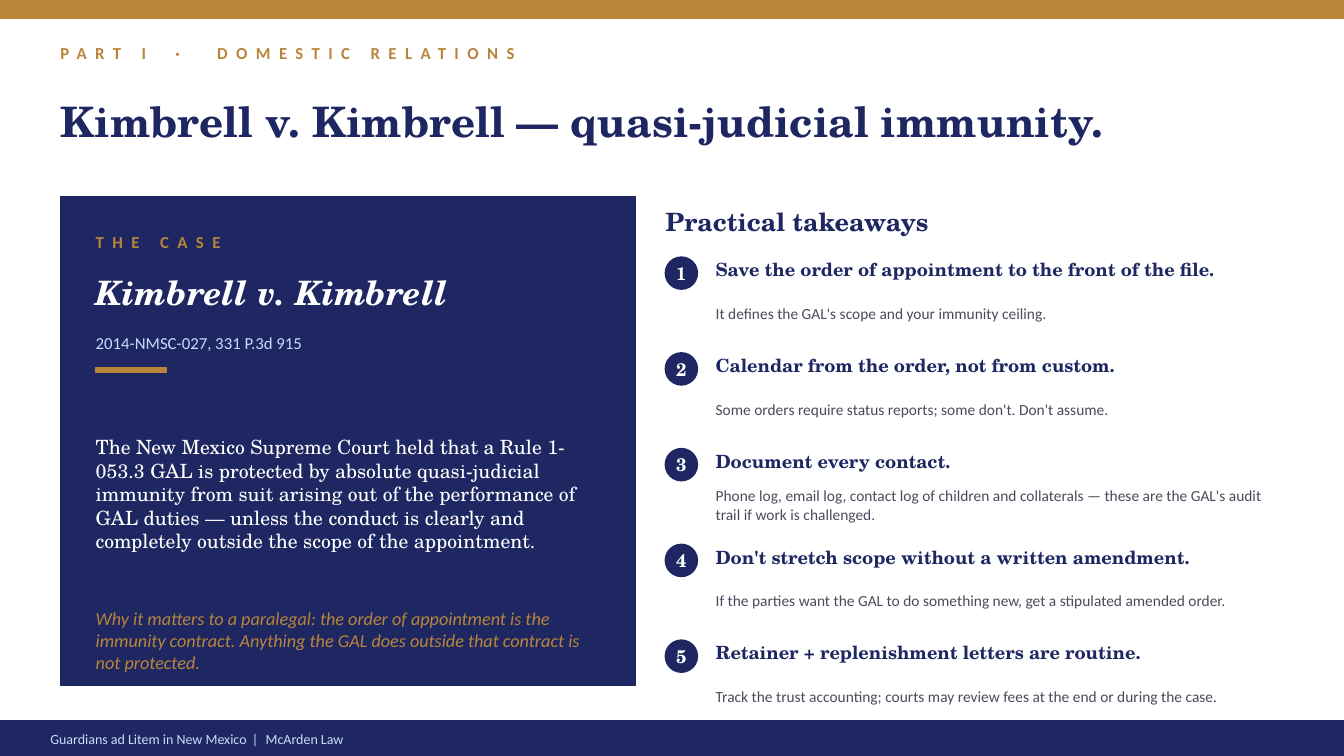
"""Build the slide on quasi-judicial immunity for guardians ad litem."""
from dataclasses import dataclass

from pptx import Presentation
from pptx.dml.color import RGBColor
from pptx.enum.shapes import MSO_SHAPE as Shape
from pptx.enum.text import MSO_ANCHOR as Anchor, MSO_AUTO_SIZE as AutoSize, PP_ALIGN as Align
from pptx.util import Pt


@dataclass(frozen=True)
class Theme:
    """Colours, fonts and type sizes."""
    navy: str = "1E2761"
    gold: str = "B8853B"
    ice: str = "CADCFC"
    white: str = "FFFFFF"
    slate: str = "4A4A5C"
    serif: str = "TeX Gyre Schola"
    sans: str = "Calibri"
    title: int = 30
    case: int = 24
    heading: int = 18
    holding: int = 14
    point: int = 13
    label: int = 12
    detail: int = 11
    footer: int = 10


@dataclass(frozen=True)
class Type:
    """One text style."""
    size: int
    color: str
    font: str
    bold: bool = False
    italic: bool = False
    tracking: float = 0


class Page:
    """A slide with its theme and a method for each kind of element."""

    def __init__(self, slide, theme):
        """Keep the slide and the theme."""
        self.slide = slide
        self.theme = theme

    def typeset(self, shape, runs, style, align=Align.LEFT):
        """Fill a shape with runs of (text, tracking) in one style."""
        frame = shape.text_frame
        frame.auto_size = AutoSize.NONE
        frame.word_wrap = True
        frame.vertical_anchor = Anchor.MIDDLE
        frame.margin_left = frame.margin_right = frame.margin_top = frame.margin_bottom = 0
        para = frame.paragraphs[0]
        para.alignment = align
        for text, tracking in runs:
            span = para.add_run()
            span.text = text
            font = span.font
            font.name, font.size = style.font, Pt(style.size)
            font.bold, font.italic = style.bold, style.italic
            font.color.rgb = RGBColor.from_string(style.color)
            if tracking:
                span._r.get_or_add_rPr().set("spc", str(int(tracking * 100)))

    def title(self, place, text, style):
        """Move and format the title placeholder."""
        box = self.slide.shapes.title
        box.left, box.top, box.width, box.height = map(Pt, place)
        self.typeset(box, [(text, 0)], style)

    def text(self, place, text, style):
        """Add a text box in one style."""
        self.spaced(place, [(text, style.tracking)], style)

    def spaced(self, place, runs, style):
        """Add a text box whose runs have their own tracking."""
        self.typeset(self.slide.shapes.add_textbox(*map(Pt, place)), runs, style)

    def block(self, place, color, kind=Shape.RECTANGLE):
        """Add a solid shape outlined in its own colour."""
        box = self.slide.shapes.add_shape(kind, *map(Pt, place))
        box.shadow.inherit = False
        box.fill.solid()
        box.fill.fore_color.rgb = box.line.color.rgb = RGBColor.from_string(color)
        box.line.width = Pt(1)
        return box

    def badge(self, left, top, number, style):
        """Add a numbered disc."""
        disc = self.block((left, top, 23, 23), self.theme.navy, Shape.OVAL)
        self.typeset(disc, [(str(number), 0)], style, Align.CENTER)


TAKEAWAYS = [
    ("Save the order of appointment to the front of the file.",
     "It defines the GAL's scope and your immunity ceiling."),
    ("Calendar from the order, not from custom.",
     "Some orders require status reports; some don't. Don't assume."),
    ("Document every contact.",
     "Phone log, email log, contact log of children and collaterals — these are "
     "the GAL's audit trail if work is challenged."),
    ("Don't stretch scope without a written amendment.",
     "If the parties want the GAL to do something new, get a stipulated amended order."),
    ("Retainer + replenishment letters are routine.",
     "Track the trust accounting; courts may review fees at the end or during the case."),
]


def draw_header(page):
    """Draw the top band, the section label and the title."""
    theme = page.theme
    label = Type(theme.label, theme.gold, theme.sans, bold=True, tracking=6)
    page.block((0, 0, 960, 13), theme.gold)
    page.spaced((43.2, 25.2, 864, 25.2),
                [("PART I", 6), (" · ", 12), ("DOMESTIC RELATIONS", 6)], label)
    page.title((43.2, 50.4, 864, 72), "Kimbrell v. Kimbrell — quasi-judicial immunity.",
               Type(theme.title, theme.navy, theme.serif, bold=True))


def draw_case(page):
    """Draw the case panel on the left."""
    theme = page.theme
    left, width = 68.4, 360
    page.block((43.2, 140.4, 410.4, 349.2), theme.navy)
    page.text((left, 158.4, width, 28.8), "THE CASE",
              Type(theme.label, theme.gold, theme.sans, bold=True, tracking=6))
    page.text((left, 187.2, width, 43.2), "Kimbrell v. Kimbrell",
              Type(theme.case, theme.white, theme.serif, bold=True, italic=True))
    page.text((left, 230.4, width, 28.8), "2014-NMSC-027, 331 P.3d 915",
              Type(theme.label, theme.ice, theme.sans))
    page.block((left, 262.8, 50.4, 2.9), theme.gold)
    page.text((left, 273.6, width, 158.4),
              "The New Mexico Supreme Court held that a Rule 1-053.3 GAL is protected by "
              "absolute quasi-judicial immunity from suit arising out of the performance of "
              "GAL duties — unless the conduct is clearly and completely outside the scope "
              "of the appointment.",
              Type(theme.holding, theme.white, theme.serif))
    page.text((left, 432, width, 50.4),
              "Why it matters to a paralegal: the order of appointment is the immunity "
              "contract. Anything the GAL does outside that contract is not protected.",
              Type(theme.point, theme.gold, theme.sans, italic=True))


def draw_takeaways(page):
    """Draw the numbered takeaways on the right."""
    theme = page.theme
    left, indent, width = 475.2, 36, 396
    number = Type(theme.point, theme.white, theme.serif, bold=True)
    point = Type(theme.point, theme.navy, theme.serif, bold=True)
    remark = Type(theme.detail, theme.slate, theme.sans)
    page.text((left, 140.4, 442.8, 36), "Practical takeaways",
              Type(theme.heading, theme.navy, theme.serif, bold=True))
    for index, (headline, detail) in enumerate(TAKEAWAYS):
        top = 180 + 68.4 * index
        page.badge(left, top + 3.6, index + 1, number)
        page.text((left + indent, top, width, 25.2), headline, point)
        page.text((left + indent, top + 25.9, width, 36), detail, remark)


def draw_footer(page):
    """Draw the bottom band and its text."""
    theme = page.theme
    page.block((0, 514.8, 960, 25.2), theme.navy)
    page.spaced((36, 517, 576, 21.6),
                [("Guardians ad Litem in New Mexico", 0), (" | ", 1.5), ("McArden Law", 0)],
                Type(theme.footer, theme.ice, theme.sans))


def main():
    """Build and save the deck."""
    deck = Presentation()
    deck.slide_width, deck.slide_height = Pt(960), Pt(540)
    page = Page(deck.slides.add_slide(deck.slide_layouts[5]), Theme())
    draw_header(page)
    draw_case(page)
    draw_takeaways(page)
    draw_footer(page)
    deck.save("out.pptx")


if __name__ == "__main__":
    main()
